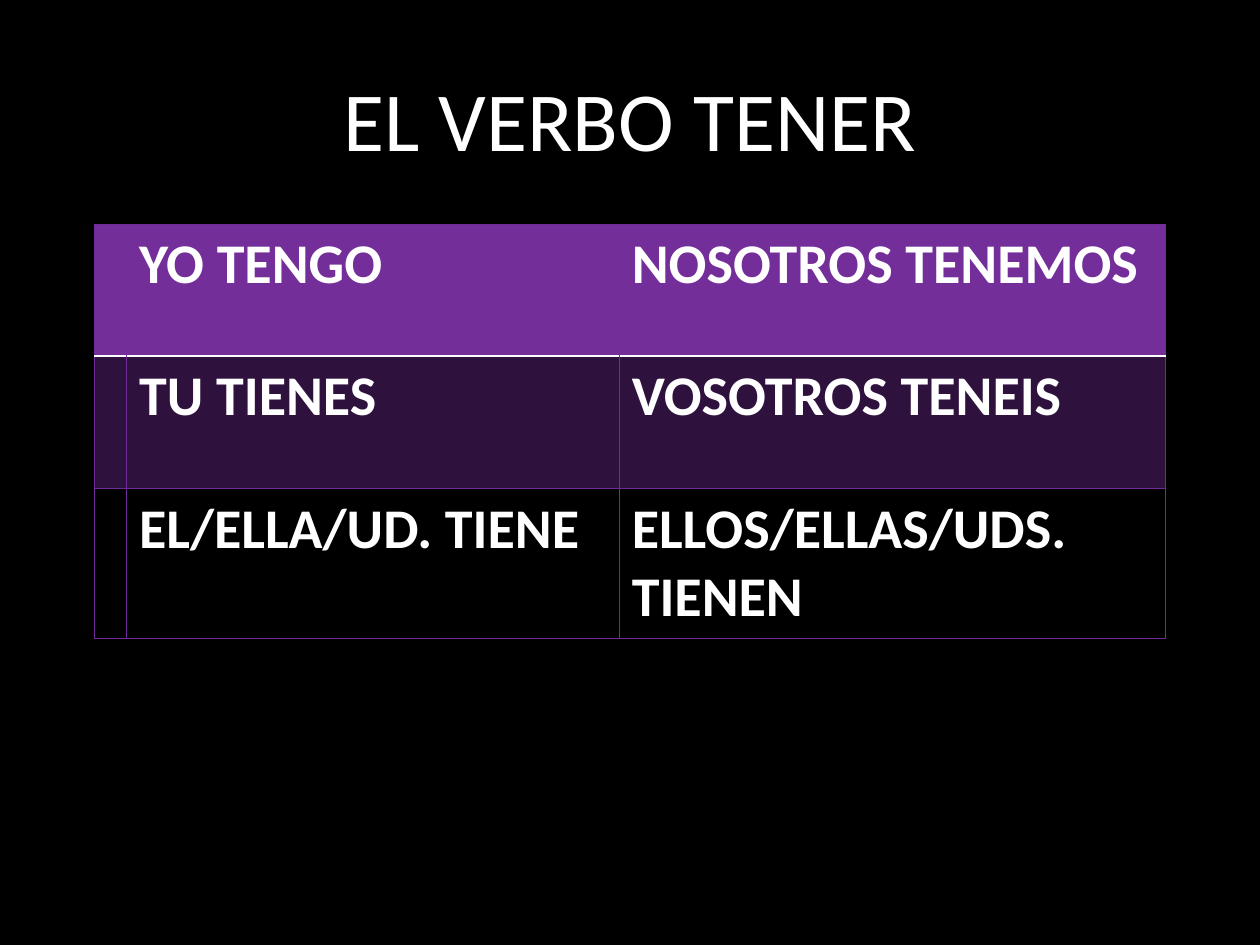
import pptx
import pptx.dml.color
import pptx.enum.text
import pptx.oxml.ns
import pptx.util
from dataclasses import dataclass
from lxml import etree


@dataclass(frozen=True)
class Theme:
    font: str = "Calibri"
    background: str = "000000"
    text: str = "FFFFFF"
    accent: str = "732E9A"
    grid: str = "712A99"
    band_opacity: int = 40
    title_size: int = 48
    cell_size: int = 32
    grid_width: float = 0.5
    rule_width: float = 1.5


THEME = Theme()
WIDTH, HEIGHT = pptx.util.Inches(10), pptx.util.Inches(7.5)
MARGIN = 0.075
COLUMN_SHARES = (0.03, 0.46, 0.51)
ROW_SHARE = 0.14
CONJUGATION = (
    ("YO TENGO", "NOSOTROS TENEMOS"),
    ("TU TIENES", "VOSOTROS TENEIS"),
    ("EL/ELLA/UD. TIENE", "ELLOS/ELLAS/UDS. TIENEN"),
)


def rgb(color):
    return pptx.dml.color.RGBColor.from_string(color)


def slide_box(left, top, width, height):
    """Turn shares of the slide into lengths."""
    return (int(left * WIDTH), int(top * HEIGHT),
            int(width * WIDTH), int(height * HEIGHT))


def style_font(font, size, bold=False):
    font.name = THEME.font
    font.size = pptx.util.Pt(size)
    font.bold = bold
    font.color.rgb = rgb(THEME.text)


def set_border(cell, side, color, width):
    """Draw one side (L, R, T or B); no color means no line."""
    qn = pptx.oxml.ns.qn
    ln = etree.SubElement(cell._tc.get_or_add_tcPr(), qn(f"a:ln{side}"),
                          w=str(pptx.util.Pt(width)))
    if color is None:
        etree.SubElement(ln, qn("a:noFill"))
    else:
        fill = etree.SubElement(ln, qn("a:solidFill"))
        etree.SubElement(fill, qn("a:srgbClr"), val=color)


def set_fill(cell, row):
    """Header is solid, the next row is tinted, the last is clear."""
    if row > 1:
        cell.fill.background()
        return
    cell.fill.solid()
    cell.fill.fore_color.rgb = rgb(THEME.accent)
    if row == 1:
        color = cell._tc.tcPr.find(".//" + pptx.oxml.ns.qn("a:solidFill")
                                   + "[last()]/..")
        color = cell._tc.tcPr.find(pptx.oxml.ns.qn("a:solidFill"))[0]
        etree.SubElement(color, pptx.oxml.ns.qn("a:alpha"),
                         val=str(THEME.band_opacity * 1000))


def style_cell(cell, row, col):
    line = (THEME.grid, THEME.grid_width)
    rule = (THEME.text, THEME.rule_width)
    hidden = (None, THEME.grid_width)
    last = len(COLUMN_SHARES) - 1
    set_border(cell, "L", *(hidden if row == 0 and col > 0 else line))
    set_border(cell, "R", *(hidden if row == 0 and col < last else line))
    set_border(cell, "T", *(rule if row == 1 else line))
    set_border(cell, "B", *(rule if row == 0 else line))
    set_fill(cell, row)


def add_title(slide, text, box):
    title = slide.shapes.title
    title.left, title.top, title.width, title.height = box
    tf = title.text_frame
    tf.text = text
    tf.vertical_anchor = pptx.enum.text.MSO_ANCHOR.MIDDLE
    p = tf.paragraphs[0]
    p.alignment = pptx.enum.text.PP_ALIGN.CENTER
    style_font(p.runs[0].font, THEME.title_size)


def add_conjugation_table(slide, rows, box):
    table = slide.shapes.add_table(len(rows), len(COLUMN_SHARES), *box).table
    table.horz_banding = False
    for column, share in zip(table.columns, COLUMN_SHARES):
        column.width = int(box[2] * share)
    for r, forms in enumerate(rows):
        for c, text in enumerate(("", *forms)):
            cell = table.cell(r, c)
            style_cell(cell, r, c)
            if text:
                cell.text = text
                style_font(cell.text_frame.paragraphs[0].runs[0].font,
                           THEME.cell_size, bold=True)


def main():
    prs = pptx.Presentation()
    prs.slide_width, prs.slide_height = WIDTH, HEIGHT
    s = prs.slides.add_slide(prs.slide_layouts.get_by_name("Title Only"))
    s.background.fill.solid()
    s.background.fill.fore_color.rgb = rgb(THEME.background)
    content_width = 1 - 2 * MARGIN
    add_title(s, "EL VERBO TENER",
              slide_box(MARGIN, 0.02, content_width, 0.21))
    add_conjugation_table(
        s, CONJUGATION,
        slide_box(MARGIN, 0.237, content_width, ROW_SHARE * len(CONJUGATION)))
    prs.save("out.pptx")


if __name__ == "__main__":
    main()
